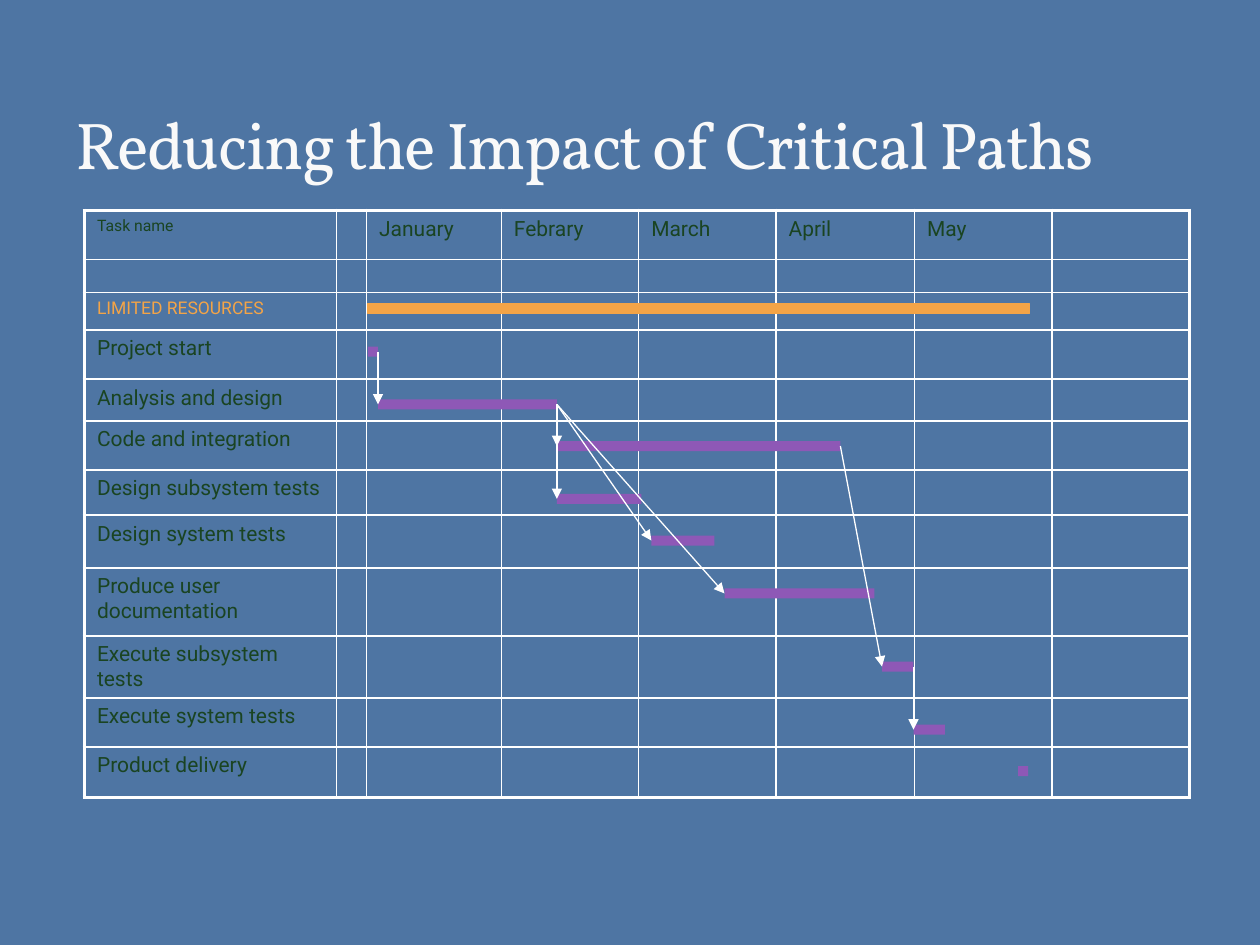
"""Build a project schedule slide: a task table with Gantt bars and dependency arrows."""
from lxml.etree import SubElement
from pptx import Presentation
from pptx.dml.color import RGBColor
from pptx.enum.shapes import MSO_CONNECTOR, MSO_SHAPE
from pptx.enum.text import MSO_ANCHOR
from pptx.oxml.ns import qn
from pptx.util import Inches, Pt

BLUE = RGBColor(0x4E, 0x75, 0xA3)
WHITE = RGBColor(0xFF, 0xFF, 0xFF)
OFF_WHITE = RGBColor(0xF9, 0xF9, 0xF9)
GREEN = RGBColor(0x1A, 0x44, 0x22)
ORANGE = RGBColor(0xF3, 0xA4, 0x47)
PURPLE = RGBColor(0x8E, 0x58, 0xB6)

TITLE = "Reducing the Impact of Critical Paths"
HEADER = ["Task name", "", "January", "Febrary", "March", "April", "May", ""]
TASKS = [
    "", "LIMITED RESOURCES", "Project start", "Analysis and design",
    "Code and integration", "Design subsystem tests", "Design system tests",
    "Produce user documentation", "Execute subsystem tests",
    "Execute system tests", "Product delivery",
]
COL_WIDTHS = [2, 0.23, 1.07, 1.09, 1.09, 1.1, 1.09, 1.09]
ROW_HEIGHTS = [0.39, 0.26, 0.3, 0.39, 0.33, 0.39, 0.36, 0.42, 0.54, 0.49, 0.39, 0.4]
SPECIAL_STYLES = {"Task name": (9, GREEN), "LIMITED RESOURCES": (10, ORANGE)}

BAR_HEIGHT = 0.08
BARS = {
    "Analysis and design": (3, 3.17, 1.42),
    "Produce user documentation": (5.75, 4.67, 1.19),
    "Code and integration": (4.42, 3.5, 2.25),
    "Design subsystem tests": (4.42, 3.92, 0.67),
    "Execute subsystem tests": (7, 5.25, 0.25),
    "Product delivery": (8.08, 6.08, 0.08),
    "Project start": (2.92, 2.75, 0.08),
    "LIMITED RESOURCES": (2.92, 2.41, 5.25),
    "Design system tests": (5.17, 4.25, 0.5),
    "Execute system tests": (7.25, 5.75, 0.25),
}
DEPENDENCIES = [
    ("Analysis and design", "Produce user documentation"),
    ("Analysis and design", "Design subsystem tests"),
    ("Code and integration", "Execute subsystem tests"),
    ("Project start", "Analysis and design"),
    ("Analysis and design", "Code and integration"),
    ("Execute subsystem tests", "Execute system tests"),
    ("Analysis and design", "Design system tests"),
]


def set_borders(cell, outer_edges):
    tc_pr = cell._tc.get_or_add_tcPr()
    for side, is_outer in zip("LRTB", outer_edges):
        ln = SubElement(tc_pr, qn(f"a:ln{side}"), w=str(Pt(2.25 if is_outer else 1)))
        fill = SubElement(ln, qn("a:solidFill"))
        SubElement(fill, qn("a:srgbClr"), val=str(WHITE))


def add_title(slide):
    box = slide.shapes.add_textbox(Inches(0.5), Inches(0.17), Inches(9), Inches(1.33))
    tf = box.text_frame
    tf.word_wrap = True
    tf.vertical_anchor = MSO_ANCHOR.BOTTOM
    p = tf.paragraphs[0]
    r = p.add_run()
    r.text = TITLE
    r.font.name = "Vollkorn"
    r.font.size = Pt(37.8)
    r.font.color.rgb = OFF_WHITE
    r.font._element.set("spc", "-100")


def add_schedule(slide):
    rows = [HEADER] + [[task] + [""] * (len(HEADER) - 1) for task in TASKS]
    last_row, last_col = len(rows) - 1, len(HEADER) - 1
    table = slide.shapes.add_table(
        len(rows), len(HEADER), Inches(0.67), Inches(1.67),
        Inches(sum(COL_WIDTHS)), Inches(sum(ROW_HEIGHTS))).table
    table.first_row = table.horz_banding = False
    for column, width in zip(table.columns, COL_WIDTHS):
        column.width = Inches(width)
    for row, height in zip(table.rows, ROW_HEIGHTS):
        row.height = Inches(height)
    for i, texts in enumerate(rows):
        for j, text in enumerate(texts):
            cell = table.cell(i, j)
            cell.text = text
            size, color = SPECIAL_STYLES.get(text, (12 if text else 8, GREEN))
            font = cell.text_frame.paragraphs[0].font
            font.name = "Roboto"
            font.size = Pt(size)
            font.color.rgb = color
            set_borders(cell, (j == 0, j == last_col, i == 0, i == last_row))
            cell.fill.background()


def add_bar(slide, task, left, top, width):
    sp = slide.shapes.add_shape(MSO_SHAPE.RECTANGLE, Inches(left), Inches(top),
                                Inches(width), Inches(BAR_HEIGHT))
    sp.shadow.inherit = False
    sp.fill.solid()
    if task == "LIMITED RESOURCES":
        sp.fill.fore_color.rgb = sp.line.color.rgb = ORANGE
        sp.line.width = Pt(0.75)
    else:
        sp.fill.fore_color.rgb = PURPLE
        sp.line.fill.background()
    return sp


def add_arrow(slide, before, after):
    arrow = slide.shapes.add_connector(MSO_CONNECTOR.STRAIGHT, 0, 0, 0, 0)
    arrow.begin_connect(before, 3)
    arrow.end_connect(after, 1)
    arrow.line.color.rgb = WHITE
    arrow.line.width = Pt(0.75)
    SubElement(arrow.line._get_or_add_ln(), qn("a:tailEnd"), type="triangle")
    SubElement(arrow._element.spPr, qn("a:effectLst"))


def main():
    prs = Presentation()
    prs.slide_width, prs.slide_height = Inches(10), Inches(7.5)
    slide = prs.slides.add_slide(prs.slide_layouts[6])
    slide.background.fill.solid()
    slide.background.fill.fore_color.rgb = BLUE
    add_schedule(slide)
    add_title(slide)
    bars = {task: add_bar(slide, task, *place) for task, place in BARS.items()}
    for before, after in DEPENDENCIES:
        add_arrow(slide, bars[before], bars[after])
    prs.save("out.pptx")


if __name__ == "__main__":
    main()
